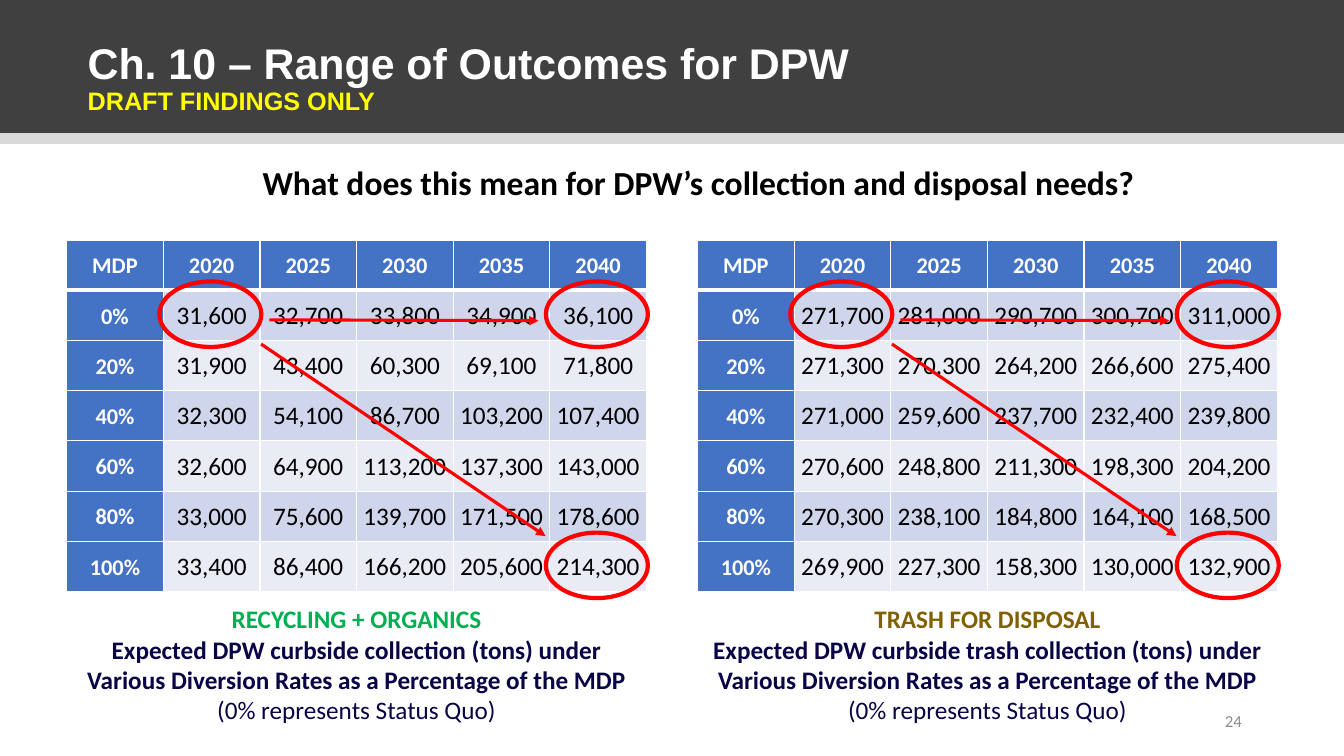
from dataclasses import dataclass

from lxml import etree
from pptx import Presentation
from pptx import util as u
from pptx.dml.color import RGBColor
from pptx.enum import shapes, text
from pptx.oxml import ns


@dataclass(frozen=True)
class Theme:
    """Colours, fonts and type sizes of the slide."""
    banner: str = "404040"
    rule: str = "D9D9D9"
    white: str = "FFFFFF"
    black: str = "000000"
    draft: str = "FFFF00"
    header: str = "4472C4"
    bands: tuple = ("E9EBF5", "CFD5EA")
    mark: str = "FF0000"
    recycling: str = "00B050"
    trash: str = "806000"
    caption: str = "090446"
    number: str = "8C8C8C"
    title_font: str = "Arial"
    body_font: str = "Calibri"
    title_size: float = 30.6
    question_size: int = 24
    body_size: int = 18
    header_size: int = 16
    number_size: int = 12


@dataclass(frozen=True)
class Box:
    """A region of the slide in centimetres."""
    left: float
    top: float
    width: float
    height: float

    def lengths(self):
        """Return left, top, width and height as lengths."""
        return [u.Cm(v) for v in (self.left, self.top, self.width, self.height)]


THEME = Theme()
YEARS = ["2020", "2025", "2030", "2035", "2040"]
RATES = ["0%", "20%", "40%", "60%", "80%", "100%"]
RECYCLING_TONS = [
    [31600, 32700, 33800, 34900, 36100],
    [31900, 43400, 60300, 69100, 71800],
    [32300, 54100, 86700, 103200, 107400],
    [32600, 64900, 113200, 137300, 143000],
    [33000, 75600, 139700, 171500, 178600],
    [33400, 86400, 166200, 205600, 214300],
]
TRASH_TONS = [
    [271700, 281000, 290700, 300700, 311000],
    [271300, 270300, 264200, 266600, 275400],
    [271000, 259600, 237700, 232400, 239800],
    [270600, 248800, 211300, 198300, 204200],
    [270300, 238100, 184800, 164100, 168500],
    [269900, 227300, 158300, 130000, 132900],
]
TABLE_HEIGHT = 8.86
ROW = TABLE_HEIGHT / (len(RATES) + 1)


def style(run, size, color, bold=False, font=THEME.body_font):
    """Format one run."""
    run.font.size = u.Pt(size)
    run.font.color.rgb = RGBColor.from_string(color)
    run.font.bold = bold
    run.font.name = font


def add_text(slide, box, words, align, anchor=text.MSO_ANCHOR.TOP):
    """Add a wrapping text box and return its paragraphs."""
    frame = slide.shapes.add_textbox(*box.lengths()).text_frame
    frame.word_wrap = True
    frame.vertical_anchor = anchor
    frame.text = words
    for paragraph in frame.paragraphs:
        paragraph.alignment = align
    return frame.paragraphs


def add_banner(slide, box):
    """Draw the dark banner, its grey rule and the title."""
    rule = Box(box.left, box.top + 3.23, box.width, 0.4)
    for band, color in ((rule, THEME.rule), (box, THEME.banner)):
        bar = slide.shapes.add_shape(shapes.MSO_SHAPE.RECTANGLE, *band.lengths())
        bar.shadow.inherit = False
        bar.fill.solid()
        bar.fill.fore_color.rgb = RGBColor.from_string(color)
        bar.line.fill.background()
    title, = add_text(slide, Box(box.left + 1.98, box.top + 1.02, 29.21, 1.93),
                      "Ch. 10 – Range of Outcomes for DPW\vDRAFT FINDINGS ONLY",
                      text.PP_ALIGN.LEFT, text.MSO_ANCHOR.MIDDLE)
    title.line_spacing = 0.9
    heading, status = title.runs
    style(heading, THEME.title_size, THEME.white, True, THEME.title_font)
    style(status, THEME.body_size, THEME.draft, True, THEME.title_font)


def add_borders(cell, row):
    """Give a cell white borders, thick under the header row."""
    widths = {"lnL": 1, "lnR": 1, "lnT": 3 if row == 1 else 1, "lnB": 3 if row == 0 else 1}
    properties = cell._tc.get_or_add_tcPr()
    for side, points in widths.items():
        border = etree.SubElement(properties, ns.qn(f"a:{side}"), w=str(u.Pt(points)))
        fill = etree.SubElement(border, ns.qn("a:solidFill"))
        etree.SubElement(fill, ns.qn("a:srgbClr"), val=THEME.white)


def add_tons_table(slide, box, tons):
    """Add the table of tons by diversion rate and year."""
    rows = [["MDP", *YEARS]]
    rows += [[rate, *(f"{value:,}" for value in values)] for rate, values in zip(RATES, tons)]
    table = slide.shapes.add_table(len(rows), len(rows[0]), *box.lengths()).table
    for column in table.columns:
        column.width = u.Cm(box.width / len(rows[0]))
    for r, values in enumerate(rows):
        table.rows[r].height = u.Cm(ROW)
        for c, value in enumerate(values):
            cell = table.cell(r, c)
            is_header = r == 0 or c == 0
            add_borders(cell, r)
            cell.fill.solid()
            cell.fill.fore_color.rgb = RGBColor.from_string(
                THEME.header if is_header else THEME.bands[r % 2])
            cell.vertical_anchor = text.MSO_ANCHOR.MIDDLE
            cell.margin_left = cell.margin_right = u.Cm(0.18 if is_header else 0.02)
            cell.margin_top = u.Cm(0 if is_header else 0.02)
            cell.margin_bottom = u.Cm(0)
            cell.text_frame.text = value
            paragraph = cell.text_frame.paragraphs[0]
            paragraph.alignment = text.PP_ALIGN.CENTER
            if is_header:
                paragraph.line_spacing = 1.07
                style(paragraph.runs[0], THEME.header_size, THEME.white, True)
            else:
                style(paragraph.runs[0], THEME.body_size, THEME.black)


def add_highlights(slide, box):
    """Circle the start and end values and join them with arrows."""
    column = box.width / (len(YEARS) + 1)
    width, height = 2.57, 1.65
    for r, c in ((1, 1), (1, 5), (6, 5)):
        spot = Box(box.left + (c + 0.5) * column - width / 2 - 0.03,
                   box.top + (r + 0.5) * ROW - height / 2 - 0.03, width, height)
        ring = slide.shapes.add_shape(shapes.MSO_SHAPE.OVAL, *spot.lengths())
        ring.shadow.inherit = False
        ring.fill.background()
        ring.line.color.rgb = RGBColor.from_string(THEME.mark)
        ring.line.width = u.Pt(3)
    for x1, y1, x2, y2 in ((4.9, 2.62, 12.07, 7.46), (5.11, 2.01, 11.89, 2.03)):
        arrow = slide.shapes.add_connector(
            shapes.MSO_CONNECTOR.STRAIGHT, u.Cm(box.left + x1), u.Cm(box.top + y1),
            u.Cm(box.left + x2), u.Cm(box.top + y2))
        arrow.line.color.rgb = RGBColor.from_string(THEME.mark)
        arrow.line.width = u.Pt(2.25)
        etree.SubElement(arrow.line._get_or_add_ln(), ns.qn("a:tailEnd"), type="triangle")
        etree.SubElement(arrow._element.spPr, ns.qn("a:effectLst"))


def add_panel(slide, box, tons, heading, subject, color):
    """Place a table with its highlights and its caption below."""
    add_tons_table(slide, Box(box.left, box.top, box.width, TABLE_HEIGHT), tons)
    words = (f"{heading}\nExpected DPW curbside {subject} (tons) under Various Diversion "
             "Rates as a Percentage of the MDP\n(0% represents Status Quo)")
    caption = Box(box.left, box.top + 9.04, box.width, box.height - 9.04)
    lines = add_text(slide, caption, words, text.PP_ALIGN.CENTER)
    looks = ((color, True), (THEME.caption, True), (THEME.caption, False))
    for line, (line_color, bold) in zip(lines, looks):
        style(line.runs[0], THEME.body_size, line_color, bold)
    add_highlights(slide, box)


def main():
    """Build the slide and save it."""
    deck = Presentation()
    deck.slide_width, deck.slide_height = u.Cm(33.87), u.Cm(19.05)
    slide = deck.slides.add_slide(deck.slide_layouts[6])
    add_banner(slide, Box(-0.02, 0, 33.91, 3.35))
    question, = add_text(slide, Box(5.97, 3.96, 23.27, 1.27),
                         "What does this mean for DPW’s collection and disposal needs?",
                         text.PP_ALIGN.CENTER)
    style(question.runs[0], THEME.question_size, THEME.black, True)
    add_panel(slide, Box(1.68, 6.05, 14.61, 12.37), RECYCLING_TONS,
              "RECYCLING + ORGANICS", "collection", THEME.recycling)
    add_panel(slide, Box(17.58, 6.05, 14.61, 12.37), TRASH_TONS,
              "TRASH FOR DISPOSAL", "trash collection", THEME.trash)
    number, = add_text(slide, Box(23.93, 17.65, 7.62, 1.02), "24",
                       text.PP_ALIGN.RIGHT, text.MSO_ANCHOR.MIDDLE)
    style(number.runs[0], THEME.number_size, THEME.number)
    deck.save("out.pptx")


if __name__ == "__main__":
    main()
